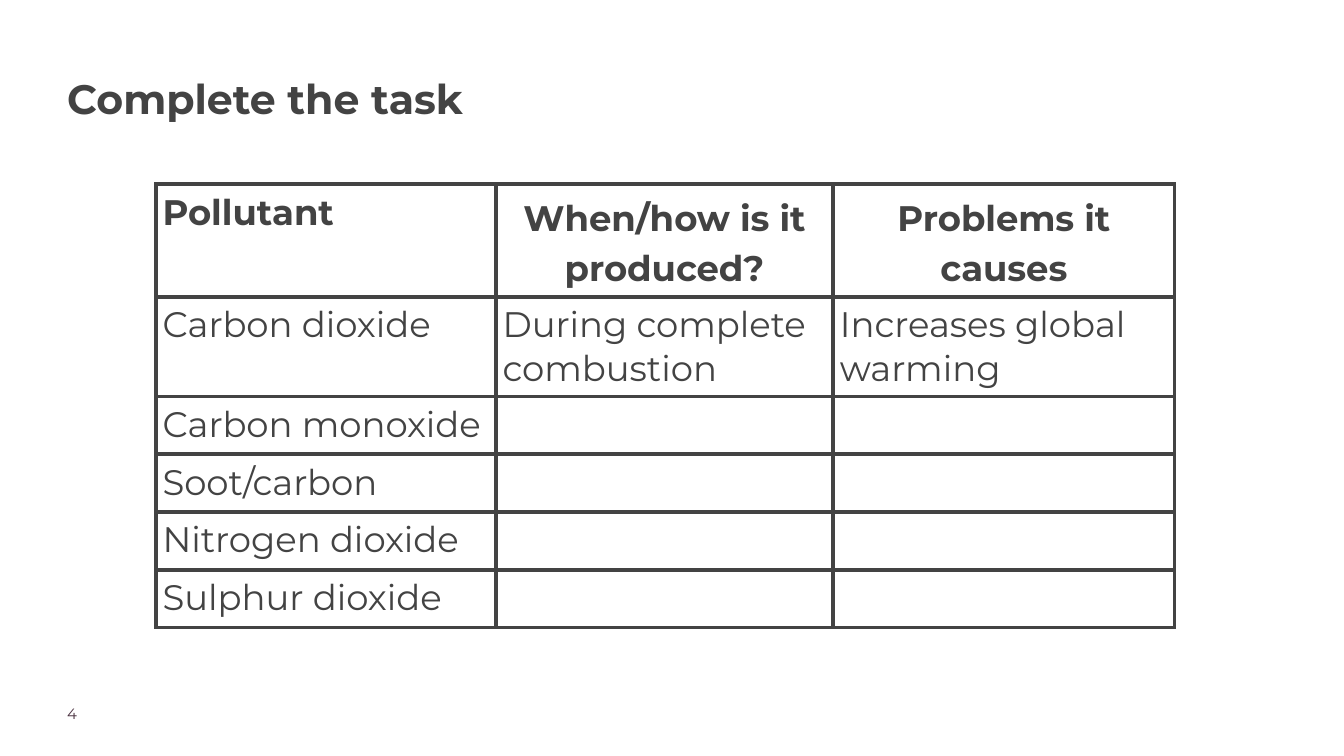
from dataclasses import dataclass

from lxml import etree
from pptx import Presentation
from pptx.dml.color import RGBColor
from pptx.enum.text import MSO_ANCHOR, PP_ALIGN
from pptx.oxml.ns import qn
from pptx.util import Inches, Pt


@dataclass(frozen=True)
class Theme:
    font: str = "Montserrat"
    ink: str = "434343"
    number_ink: str = "4B3241"
    paper: str = "FFFFFF"
    title_size: float = 22
    table_size: float = 19
    number_size: float = 8
    border_width: float = 2.25
    cell_margin: float = 0.05
    line_spacing: float = 1.15


THEME = Theme()

HEADINGS = ["Pollutant", "When/how is it produced?", "Problems it causes"]
POLLUTANTS = [
    ["Carbon dioxide", "During complete combustion", "Increases global warming"],
    ["Carbon monoxide", "", ""],
    ["Soot/carbon", "", ""],
    ["Nitrogen dioxide", "", ""],
    ["Sulphur dioxide", "", ""],
]
COLUMN_WIDTHS = [2.53, 2.51, 2.54]
ROW_HEIGHTS = [0.84, 0.74] + [0.43] * 4


def style_text(frame, size, color, bold=False, align=PP_ALIGN.LEFT, spacing=1.0):
    for paragraph in frame.paragraphs:
        paragraph.alignment = align
        paragraph.line_spacing = spacing
        paragraph.font.size = Pt(size)
        for run in paragraph.runs:
            run.font.name = THEME.font
            run.font.size = Pt(size)
            run.font.bold = bold
            run.font.color.rgb = RGBColor.from_string(color)


def clear_margins(frame):
    frame.margin_left = frame.margin_right = 0
    frame.margin_top = frame.margin_bottom = 0
    frame.vertical_anchor = MSO_ANCHOR.TOP
    frame.word_wrap = True


def add_borders(cell):
    properties = cell._tc.get_or_add_tcPr()
    for position, side in enumerate(("a:lnL", "a:lnR", "a:lnT", "a:lnB")):
        line = etree.Element(qn(side), w=str(Pt(THEME.border_width)))
        fill = etree.SubElement(line, qn("a:solidFill"))
        etree.SubElement(fill, qn("a:srgbClr"), val=THEME.ink)
        properties.insert(position, line)


def place_title(slide, left, top, width, height):
    title = slide.shapes.title
    title.left, title.top = Inches(left), Inches(top)
    title.width, title.height = Inches(width), Inches(height)
    title.text_frame.text = "Complete the task"
    clear_margins(title.text_frame)
    style_text(title.text_frame, THEME.title_size, THEME.ink, bold=True,
               spacing=THEME.line_spacing)


def add_pollutant_table(slide, left, top):
    rows = [HEADINGS] + POLLUTANTS
    table = slide.shapes.add_table(
        len(rows), len(HEADINGS), Inches(left), Inches(top),
        Inches(sum(COLUMN_WIDTHS)), Inches(sum(ROW_HEIGHTS))).table
    table.horz_banding = False
    for column, width in zip(table.columns, COLUMN_WIDTHS):
        column.width = Inches(width)
    for row, height in zip(table.rows, ROW_HEIGHTS):
        row.height = Inches(height)

    margin = Inches(THEME.cell_margin)
    for r, entries in enumerate(rows):
        for c, entry in enumerate(entries):
            cell = table.cell(r, c)
            cell.margin_left = cell.margin_right = margin
            cell.margin_top = cell.margin_bottom = margin
            cell.fill.solid()
            cell.fill.fore_color.rgb = RGBColor.from_string(THEME.paper)
            add_borders(cell)
            cell.text_frame.text = entry
            centred = r == 0 and c > 0
            style_text(cell.text_frame, THEME.table_size, THEME.ink, bold=r == 0,
                       align=PP_ALIGN.CENTER if centred else PP_ALIGN.LEFT,
                       spacing=THEME.line_spacing if centred else 1.0)


def add_page_number(slide, left, top, width, height):
    number = slide.shapes.add_textbox(
        Inches(left), Inches(top), Inches(width), Inches(height))
    number.text_frame.text = "4"
    clear_margins(number.text_frame)
    style_text(number.text_frame, THEME.number_size, THEME.number_ink)


def main():
    deck = Presentation()
    deck.slide_width = Inches(10)
    deck.slide_height = deck.slide_width * 9 // 16
    slide = deck.slides.add_slide(deck.slide_layouts[5])
    place_title(slide, 0.5, 0.49, 7.22, 0.89)
    add_page_number(slide, 0.5, 5.24, 0.79, 0.2)
    add_pollutant_table(slide, 1.16, 1.37)
    deck.save("out.pptx")


if __name__ == "__main__":
    main()
